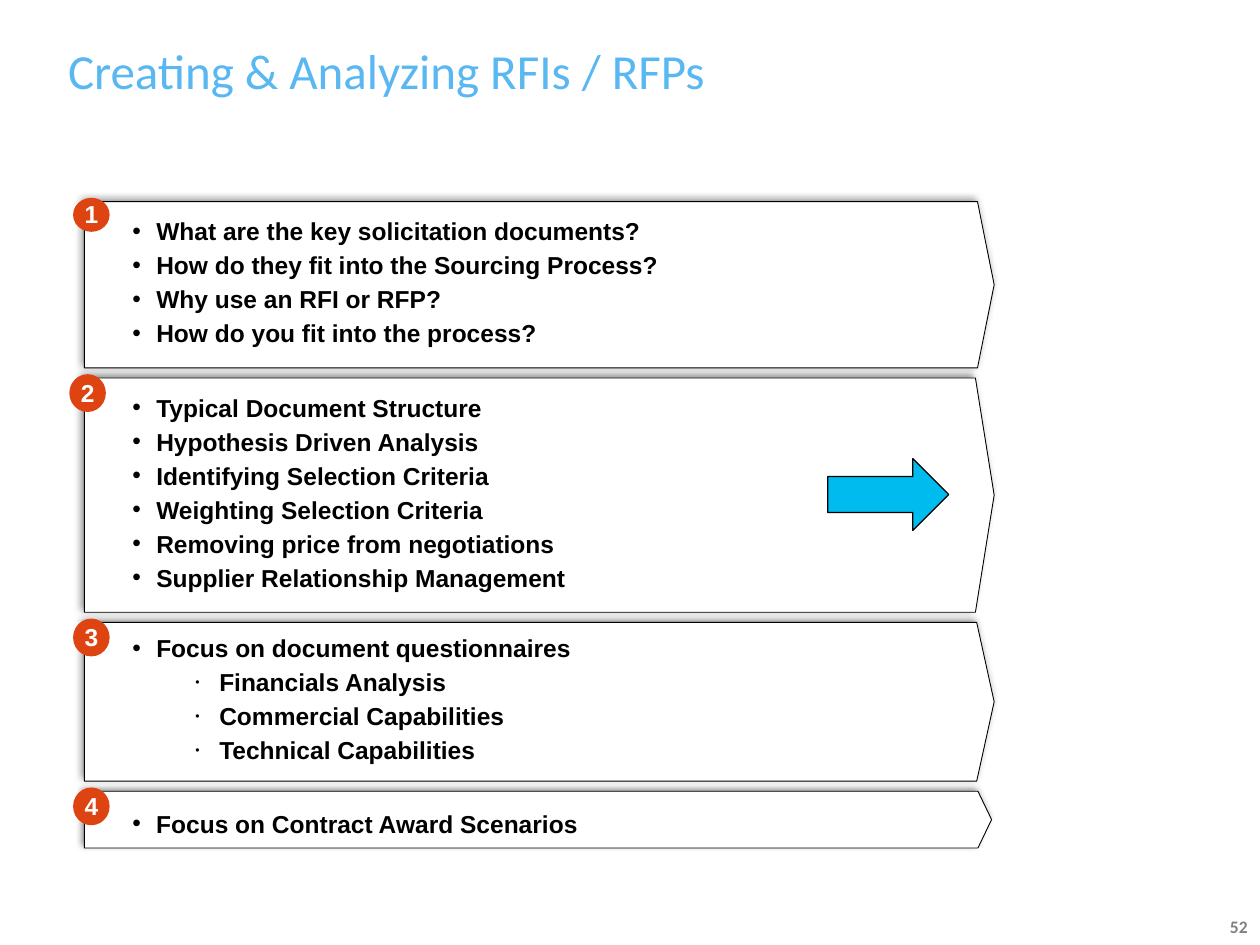
import pptx
import pptx.util
import pptx.dml.color
import pptx.enum.shapes
import pptx.enum.text
import pptx.oxml
import pptx.oxml.ns
import lxml.etree

Inches, Pt = pptx.util.Inches, pptx.util.Pt
SHAPE = pptx.enum.shapes.MSO_SHAPE
ALIGN = pptx.enum.text.PP_ALIGN
ANCHOR = pptx.enum.text.MSO_ANCHOR

COLORS = {"title": "59B7F2", "ink": "000000", "paper": "FFFFFF",
          "badge": "DD4411", "arrow": "00BBEE", "page": "808080"}
TITLE = "Creating & Analyzing RFIs / RFPs"
PAGE = "52"
LEFT, TOP, GAP = 0.67, 1.6, 0.08
STEPS = [
    {"width": 7.22, "height": 1.32, "point": 0.1, "badge": (0.58, 0.27),
     "anchor": ANCHOR.MIDDLE,
     "items": [(0, "What are the key solicitation documents?"),
               (0, "How do they fit into the Sourcing Process?"),
               (0, "Why use an RFI or RFP?"),
               (0, "How do you fit into the process?")]},
    {"width": 7.22, "height": 1.86, "point": 0.08, "badge": (0.55, 0.3),
     "anchor": ANCHOR.MIDDLE,
     "items": [(0, "Typical Document Structure"),
               (0, "Hypothesis Driven Analysis"),
               (0, "Identifying Selection Criteria"),
               (0, "Weighting Selection Criteria"),
               (0, "Removing price from negotiations"),
               (0, "Supplier Relationship Management")]},
    {"width": 7.22, "height": 1.26, "point": 0.11, "badge": (0.58, 0.3),
     "anchor": ANCHOR.MIDDLE,
     "items": [(0, "Focus on document questionnaires"),
               (1, "Financials Analysis"),
               (1, "Commercial Capabilities"),
               (1, "Technical Capabilities")]},
    {"width": 7.2, "height": 0.45, "point": 0.24, "badge": (0.58, 0.3),
     "anchor": ANCHOR.BOTTOM,
     "items": [(0, "Focus on Contract Award Scenarios")]},
]


def rgb(name):
    return pptx.dml.color.RGBColor.from_string(COLORS[name])


def style(para, face, size, color, bold=False):
    font = para.font
    font.name, font.size, font.bold = face, Pt(size), bold
    font.color.rgb = rgb(color)


def inset(frame, *sides):
    (frame.margin_left, frame.margin_top,
     frame.margin_right, frame.margin_bottom) = map(Inches, sides)


def draw(shapes, kind, box, fill, line=None):
    shape = shapes.add_shape(kind, *map(Inches, box))
    shape.shadow.inherit = False
    shape.fill.solid()
    shape.fill.fore_color.rgb = rgb(fill)
    if line:
        shape.line.color.rgb = rgb("ink")
        shape.line.width = Pt(line)
    else:
        shape.line.fill.background()
    return shape


def label(shapes, box, text, align, wrap):
    frame = shapes.add_textbox(*map(Inches, box)).text_frame
    frame.word_wrap = wrap
    frame.vertical_anchor = ANCHOR.MIDDLE
    para = frame.paragraphs[0]
    para.text, para.alignment = text, align
    return para


def shade(shape):
    glow = shape._element.spPr.find(pptx.oxml.ns.qn("a:effectLst"))
    glow.append(pptx.oxml.parse_xml(
        f'<a:outerShdw {pptx.oxml.ns.nsdecls("a")} blurRad="{Pt(4)}" '
        f'dist="{Pt(3)}" dir="{225 * 60000}" algn="br" rotWithShape="0">'
        f'<a:srgbClr val="{COLORS["ink"]}"><a:alpha val="40000"/></a:srgbClr>'
        '</a:outerShdw>'))


def bullet(para, level, text):
    para.text, para.level = text, level
    para.alignment = ALIGN.LEFT
    para.line_spacing, para.space_after = 0.8, Pt(6)
    props = para._p.get_or_add_pPr()
    props.set("marL", str(Inches(0.49 + 0.5 * level)))
    props.set("indent", str(Inches(-0.19)))
    qn = pptx.oxml.ns.qn
    if level:
        lxml.etree.SubElement(props, qn("a:buSzPct")).set("val", "50000")
    lxml.etree.SubElement(props, qn("a:buFont")).set("typeface", "Arial")
    lxml.etree.SubElement(props, qn("a:buChar")).set("char", "•")
    style(para, "Arial", 14, "ink", True)


def panel(slide, num, top, step):
    shapes = slide.shapes.add_group_shape().shapes
    plate = draw(shapes, SHAPE.PENTAGON,
                 (LEFT, top, step["width"], step["height"]), "paper", 0.5)
    plate.adjustments[0] = step["point"]
    shade(plate)
    frame = plate.text_frame
    frame.word_wrap = True
    frame.vertical_anchor = step["anchor"]
    inset(frame, 0.08, 0.08, 0.08, 0.08)
    for i, (level, text) in enumerate(step["items"]):
        para = frame.add_paragraph() if i else frame.paragraphs[0]
        bullet(para, level, text)
    left, tall = step["badge"]
    draw(shapes, SHAPE.OVAL, (left, top - 0.03, 0.29, tall), "badge")
    para = label(shapes, (left - 0.05, top - 0.06, 0.39, tall + 0.09),
                 str(num), ALIGN.CENTER, False)
    para.line_spacing = 0.8
    style(para, "Arial", 14, "paper", True)


def main():
    deck = pptx.Presentation()
    deck.slide_width, deck.slide_height = Inches(10), Inches(7.5)
    slide = deck.slides.add_slide(deck.slide_layouts[5])

    title = slide.shapes.title
    title.left, title.top, title.width, title.height = map(
        Inches, (0.54, 0.01, 8.92, 0.78))
    frame = title.text_frame
    frame.text = TITLE
    frame.vertical_anchor = ANCHOR.BOTTOM
    inset(frame, 0, 0.05, 0.1, 0)
    frame.paragraphs[0].alignment = ALIGN.LEFT
    style(frame.paragraphs[0], "Calibri", 28, "title")

    page = label(slide.shapes, (8.15, 7.2, 1.85, 0.3), PAGE, ALIGN.RIGHT, True)
    style(page, "Calibri", 10, "page", True)

    top = TOP
    for num, step in enumerate(STEPS, 1):
        panel(slide, num, top, step)
        top += step["height"] + GAP
    draw(slide.shapes, SHAPE.RIGHT_ARROW, (6.57, 3.64, 0.96, 0.57), "arrow", 0.75)
    deck.save("out.pptx")


if __name__ == "__main__":
    main()
